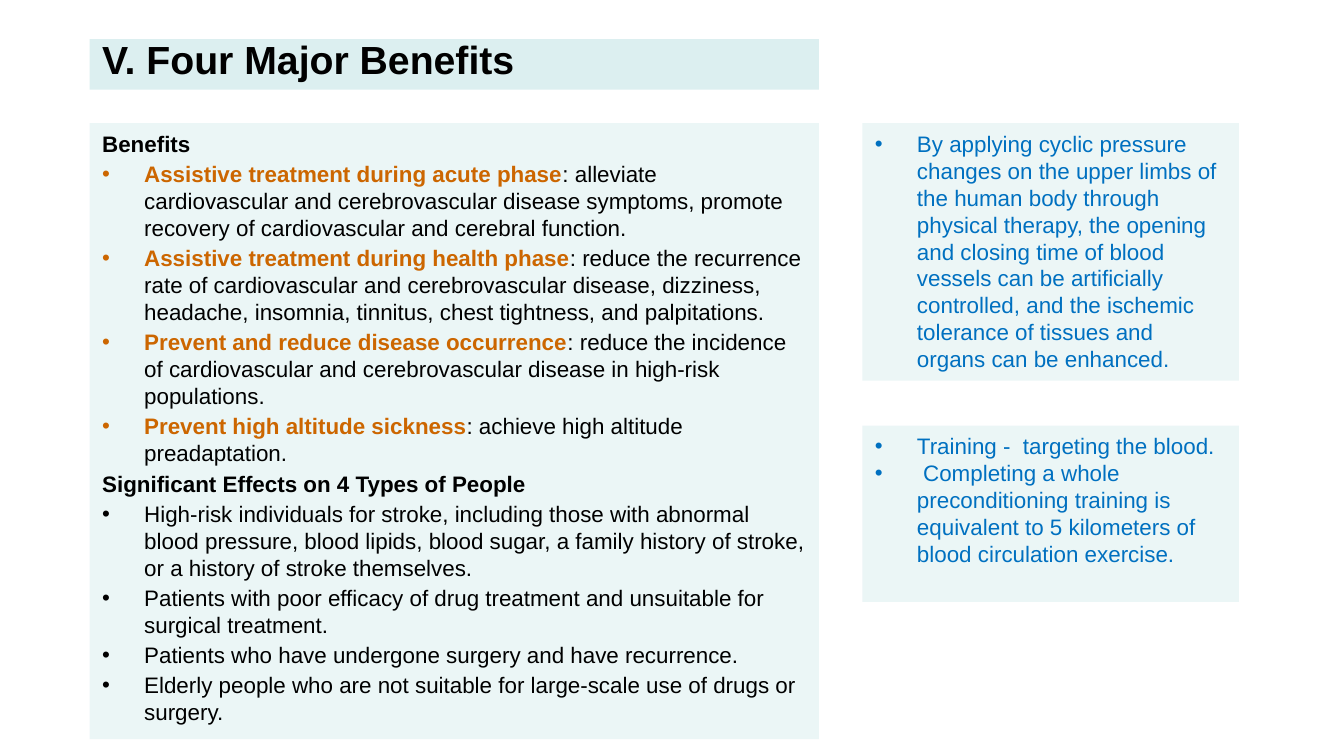
from dataclasses import dataclass

from lxml import etree
from pptx import Presentation
from pptx.dml.color import RGBColor
from pptx.enum.shapes import MSO_SHAPE
from pptx.enum.text import MSO_ANCHOR, MSO_AUTO_SIZE, PP_ALIGN
from pptx.oxml.ns import qn
from pptx.util import Pt

PX = 9525
RECT = MSO_SHAPE.RECTANGLE
TOP, BOTTOM = MSO_ANCHOR.TOP, MSO_ANCHOR.BOTTOM
FIXED = MSO_AUTO_SIZE.NONE
LEFT = PP_ALIGN.LEFT


@dataclass(frozen=True)
class Theme:
    """Hold the colours, type sizes and spacing of the slide."""

    font: str = "Arial"
    ink: str = "000000"
    accent: str = "CC6600"
    blue: str = "0070C0"
    teal: str = "BBE0E3"
    pale: str = "D9EDEE"
    head: float = 21
    text: float = 12
    line: float = 14.4
    gap: float = 1.8
    hang: int = 30


THEME = Theme()

GAINS = [
    ("Assistive treatment during acute phase",
     ": alleviate cardiovascular and cerebrovascular disease symptoms, "
     "promote recovery of cardiovascular and cerebral function."),
    ("Assistive treatment during health phase",
     ": reduce the recurrence rate of cardiovascular and cerebrovascular "
     "disease, dizziness, headache, insomnia, tinnitus, chest tightness, "
     "and palpitations."),
    ("Prevent and reduce disease occurrence",
     ": reduce the incidence of cardiovascular and cerebrovascular disease "
     "in high-risk populations."),
    ("Prevent high altitude sickness",
     ": achieve high altitude preadaptation."),
]
PEOPLE = [
    "High-risk individuals for stroke, including those with abnormal blood "
    "pressure, blood lipids, blood sugar, a family history of stroke, or a "
    "history of stroke themselves.",
    "Patients with poor efficacy of drug treatment and unsuitable for "
    "surgical treatment.",
    "Patients who have undergone surgery and have recurrence.",
    "Elderly people who are not suitable for large-scale use of drugs or "
    "surgery.",
]
TRAIN = [
    "Training -  targeting the blood.",
    " Completing a whole preconditioning training is equivalent to "
    "5 kilometers of blood circulation exercise.",
]
METHOD = [
    "By applying cyclic pressure changes on the upper limbs of the human "
    "body through physical therapy, the opening and closing time of blood "
    "vessels can be artificially controlled, and the ischemic tolerance of "
    "tissues and organs can be enhanced.",
]


def apply(item, form):
    """Set each format value on the item."""
    for name, value in form.items():
        setattr(item, name, value)


def panel(shape, box, tint, alpha, anchor=TOP):
    """Place a tinted text panel in its box and return its text frame."""
    names = ("left", "top", "width", "height")
    apply(shape, dict(zip(names, (n * PX for n in box))))
    shape.fill.solid()
    shape.fill.fore_color.rgb = RGBColor.from_string(tint)
    colour = shape.fill._xPr.find(".//" + qn("a:srgbClr"))
    etree.SubElement(colour, qn("a:alpha"), val=str(alpha * 1000))
    shape.line.fill.background()
    frame = shape.text_frame
    apply(frame, {
        "word_wrap": True, "auto_size": FIXED, "vertical_anchor": anchor,
        "margin_left": 9 * PX, "margin_right": 9 * PX,
        "margin_top": 5 * PX, "margin_bottom": 5 * PX,
    })
    return frame


def write(para, text, size, colour, bold=False):
    """Add one formatted run to the paragraph."""
    run = para.add_run()
    run.text = text
    apply(run.font, {"name": THEME.font, "size": Pt(size), "bold": bold})
    run.font.color.rgb = RGBColor.from_string(colour)


def bullet(para):
    """Give the paragraph a hanging round bullet."""
    props = para._p.get_or_add_pPr()
    props.set("marL", str(THEME.hang * PX))
    props.set("indent", str(-THEME.hang * PX))
    etree.SubElement(props, qn("a:buFont"), typeface=THEME.font)
    etree.SubElement(props, qn("a:buChar"), char="•")


def fill(frame, rows, gap=0):
    """Write rows of (dotted, runs) into the frame."""
    for i, (dotted, runs) in enumerate(rows):
        para = frame.add_paragraph() if i else frame.paragraphs[0]
        apply(para, {"alignment": LEFT, "line_spacing": Pt(THEME.line),
                     "space_before": Pt(gap), "space_after": Pt(0)})
        if dotted:
            bullet(para)
        for text, colour, bold in runs:
            write(para, text, THEME.text, colour, bold)


def title(slide, box):
    """Set the heading band."""
    frame = panel(slide.shapes.title, box, THEME.teal, 51, BOTTOM)
    para = frame.paragraphs[0]
    para.alignment = LEFT
    write(para, "V. Four Major Benefits", THEME.head, THEME.ink, True)


def body(slide, box):
    """Set the list of benefits and of people helped."""
    frame = panel(slide.placeholders[1], box, THEME.teal, 29)
    ink = THEME.ink
    rows = [(False, [("Benefits", ink, True)])]
    rows += [(True, [(lead, THEME.accent, True), (rest, ink, False)])
             for lead, rest in GAINS]
    rows += [(False, [("Significant Effects on 4 Types of People", ink, True)])]
    rows += [(True, [(text, ink, False)]) for text in PEOPLE]
    fill(frame, rows, THEME.gap)


def note(slide, box, texts, tint, alpha):
    """Add a side note of blue bullets."""
    shape = slide.shapes.add_shape(RECT, 0, 0, PX, PX)
    shape.shadow.inherit = False
    frame = panel(shape, box, tint, alpha)
    fill(frame, [(True, [(text, THEME.blue, False)]) for text in texts])


def main():
    """Build and save the slide."""
    deck = Presentation()
    apply(deck, {"slide_width": 960 * PX, "slide_height": 540 * PX})
    slide = deck.slides.add_slide(deck.slide_layouts[0])
    title(slide, (64, 28, 521, 36))
    body(slide, (64, 88, 521, 440))
    note(slide, (616, 304, 269, 126), TRAIN, THEME.teal, 29)
    note(slide, (616, 88, 269, 184), METHOD, THEME.pale, 49)
    deck.save("out.pptx")


if __name__ == "__main__":
    main()
